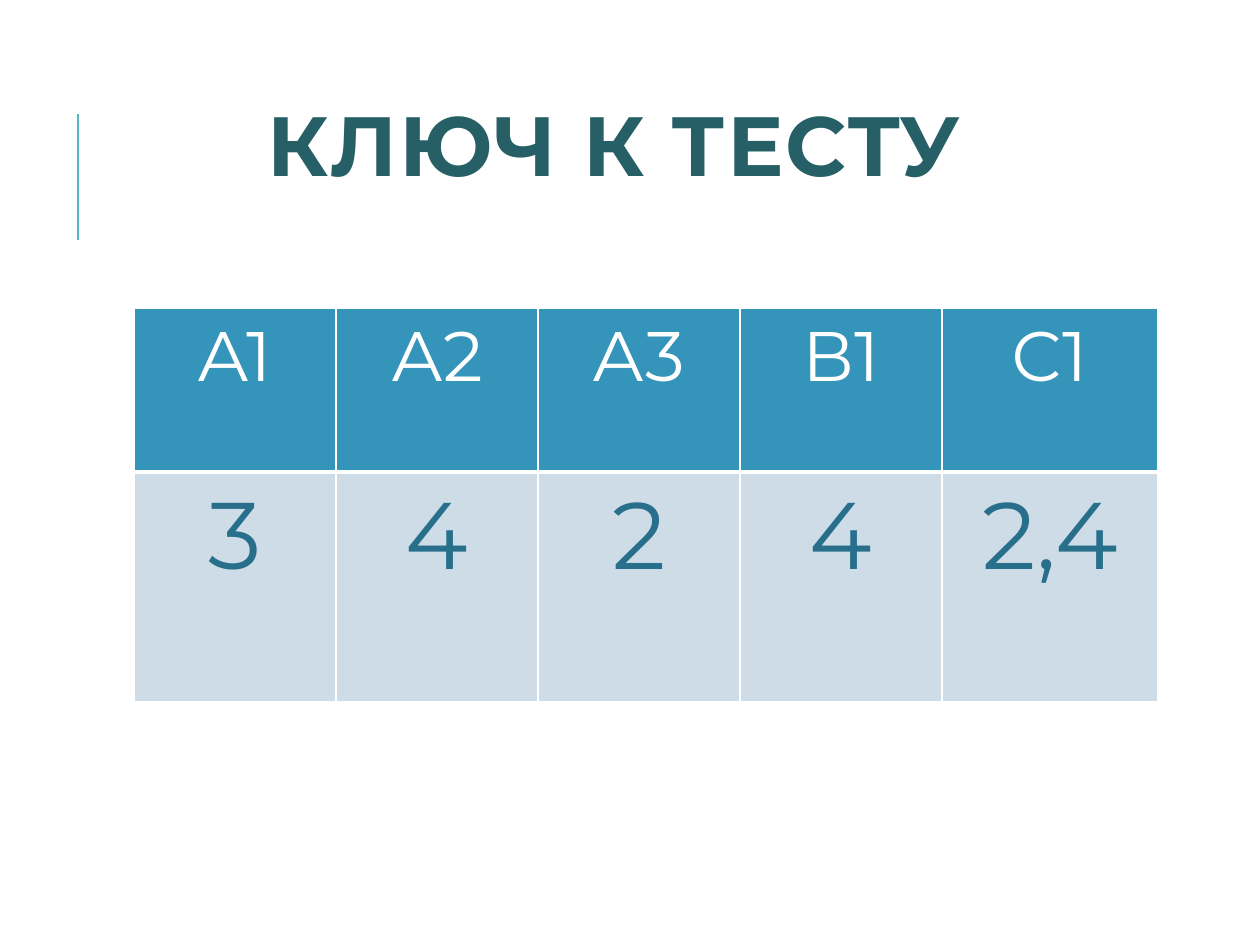
from lxml import etree
from pptx import Presentation
from pptx.dml.color import RGBColor
from pptx.enum.shapes import MSO_CONNECTOR
from pptx.enum.text import MSO_ANCHOR, MSO_AUTO_SIZE, PP_ALIGN
from pptx.oxml.ns import qn
from pptx.util import Emu, Inches, Pt

PX = Inches(1) / 126
TITLE_ONLY = 5
CENTER = PP_ALIGN.CENTER
MIDDLE = MSO_ANCHOR.MIDDLE
TOP = MSO_ANCHOR.TOP
STRAIGHT = MSO_CONNECTOR.STRAIGHT
NO_FIT = MSO_AUTO_SIZE.NONE
COLORS = {
    "title": "266066",
    "accent": "58B6C0",
    "header": "3494BA",
    "answer": "276F8B",
    "answer_fill": "CEDCE7",
    "white": "FFFFFF",
}


def px(*lengths):
    return [Emu(round(length * PX)) for length in lengths]


def color(name):
    return RGBColor.from_string(COLORS[name])


class SlideBuilder:
    """Holds the text style and the slide being filled."""

    font_name = "Montserrat"

    def __init__(self, slide):
        self.slide = slide

    def add_text(self, para, text, fill, **values):
        para.alignment = CENTER
        span = para.add_run()
        span.text = text
        for name, value in {"name": self.font_name, **values}.items():
            setattr(span.font, name, value)
        span.font.color.rgb = color(fill)
        return span

    def title(self, text, bounds):
        box = self.slide.shapes.title
        for name, value in zip(("left", "top", "width", "height"), px(*bounds)):
            setattr(box, name, value)
        frame = box.text_frame
        frame.word_wrap = True
        frame.auto_size = NO_FIT
        frame.vertical_anchor = MIDDLE
        para = frame.paragraphs[0]
        para.line_spacing = 0.8
        span = self.add_text(para, text, "title", size=Pt(48), bold=True)
        span.font._element.set("spc", "100")

    def line(self, start, end, fill, weight):
        connector = self.slide.shapes.add_connector(STRAIGHT, *px(*start, *end))
        connector.line.color.rgb = color(fill)
        connector.line.width = Pt(weight)
        etree.SubElement(connector._element.spPr, qn("a:effectLst"))

    def borders(self, cell, weights):
        """Draw white borders; weights maps the sides L, R, T, B to points."""
        properties = cell._tc.get_or_add_tcPr()
        for side, weight in weights.items():
            edge = etree.SubElement(properties, qn(f"a:ln{side}"), w=str(Pt(weight)))
            solid = etree.SubElement(edge, qn("a:solidFill"))
            etree.SubElement(solid, qn("a:srgbClr"), val=COLORS["white"])

    def table(self, corner, widths, rows):
        size = sum(widths), sum(row["height"] for row in rows)
        frame = self.slide.shapes.add_table(
            len(rows), len(widths), *px(*corner, *size))
        grid = frame.table
        grid.first_row = grid.horz_banding = False
        for column, width in zip(grid.columns, px(*widths)):
            column.width = width
        for line, row in zip(grid.rows, rows):
            line.height = px(row["height"])[0]
            for cell, text in zip(line.cells, row["texts"]):
                self.borders(cell, {"L": 1, "R": 1, "T": 1, "B": row["bottom"]})
                cell.fill.solid()
                cell.fill.fore_color.rgb = color(row["fill"])
                cell.vertical_anchor = TOP
                self.add_text(cell.text_frame.paragraphs[0], text, row["color"],
                              size=Pt(row["size"]), bold=False)


def main():
    deck = Presentation()
    deck.slide_width, deck.slide_height = px(1260, 945)
    page = SlideBuilder(deck.slides.add_slide(deck.slide_layouts[TITLE_ONLY]))
    page.line((78, 240), (78, 114), "accent", 1.5)
    page.title("КЛЮЧ К ТЕСТУ", (95, 35, 1039, 234))
    page.table((134, 308), [202] * 4 + [216], [
        {"texts": ["А1", "А2", "А3", "В1", "С1"], "height": 164, "size": 40,
         "color": "white", "fill": "header", "bottom": 3},
        {"texts": ["3", "4", "2", "4", "2,4"], "height": 230, "size": 54,
         "color": "answer", "fill": "answer_fill", "bottom": 1},
    ])
    deck.save("out.pptx")


if __name__ == "__main__":
    main()
